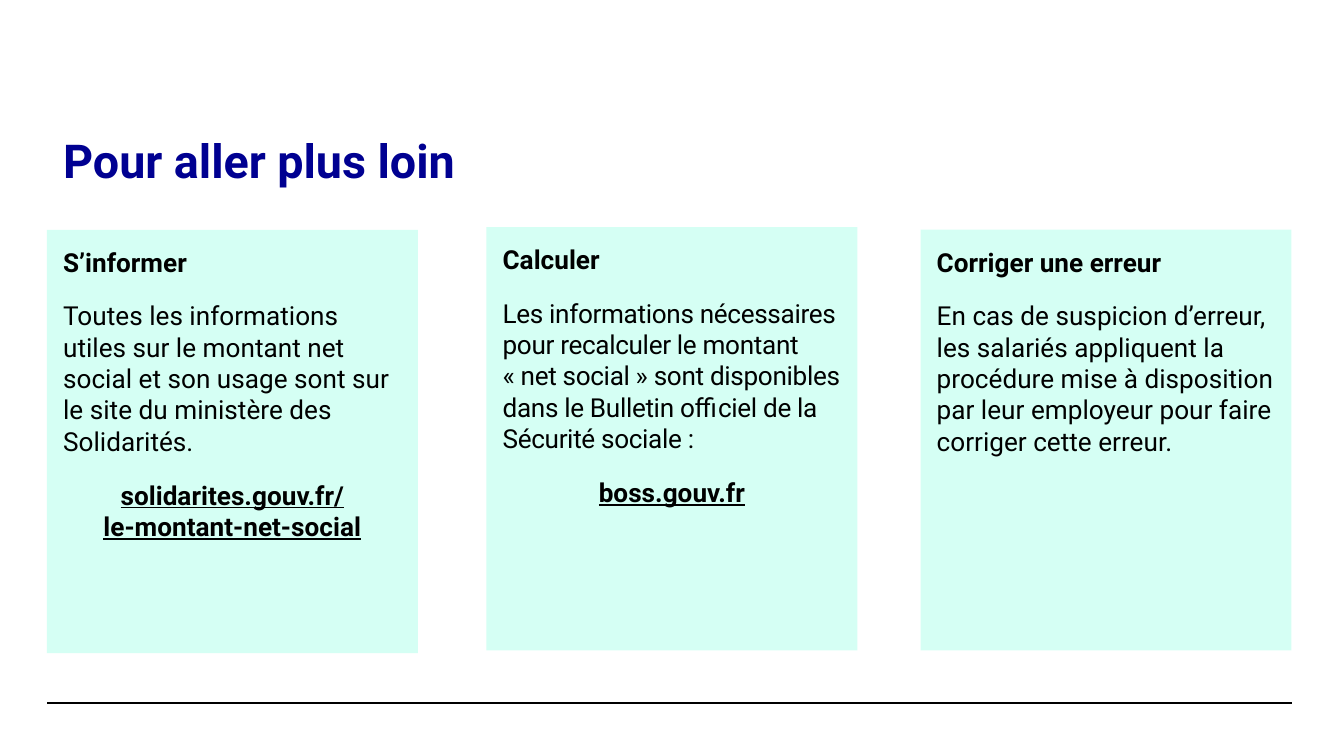
"""Build the slide "Pour aller plus loin" with its three cards."""
from dataclasses import dataclass

from lxml.etree import SubElement
from pptx import Presentation
from pptx.dml.color import RGBColor
from pptx.enum.shapes import MSO_CONNECTOR, MSO_SHAPE
from pptx.enum.text import MSO_ANCHOR, PP_ALIGN
from pptx.oxml.ns import qn
from pptx.slide import Slide
from pptx.text.text import TextFrame, _Paragraph
from pptx.util import Inches, Pt

BLACK = RGBColor(0x00, 0x00, 0x00)
BLUE = RGBColor(0x00, 0x00, 0x91)
MINT = RGBColor(0xD5, 0xFF, 0xF4)
FONT = "Roboto"
NBSP = chr(160)
LEFT = 0.35
PAD = 0.12
WIDTH = 2.76
SPAN = 9.22


@dataclass(frozen=True)
class Card:
    left: float
    top: float
    height: float
    head: str
    body: str
    site: tuple[str, ...] = ()
    track: int = 0


CARDS = (
    Card(
        LEFT, 1.71, 3.15, "S’informer",
        f"Toutes les informations utiles sur le montant net social{NBSP}et son usage "
        "sont sur le site du ministère des Solidarités.",
        ("solidarites.gouv.fr/", "le-montant-net-social"),
    ),
    Card(
        6.85, 1.71, 3.13, "Corriger une erreur",
        "En cas de suspicion d’erreur, les salariés appliquent la procédure mise "
        "à disposition par leur employeur pour faire corriger cette erreur.",
    ),
    Card(
        3.62, 1.69, 3.15, "Calculer",
        "Les informations nécessaires pour recalculer le montant "
        f"«{NBSP}net social{NBSP}» sont disponibles dans le Bulletin officiel de la "
        "Sécurité sociale :",
        ("boss.gouv.fr",), -20,
    ),
)


def add_run(para: _Paragraph, text: str, size: float = 14, color: RGBColor = BLACK,
            bold: bool = True, under: bool = False, track: int = 0) -> None:
    run = para.add_run()
    run.text = text
    font = run.font
    font.name, font.size, font.bold = FONT, Pt(size), bold
    font.color.rgb = color
    if under:
        font.underline = True
    if track:
        run._r.get_or_add_rPr().set("spc", str(track))


def set_frame(frame: TextFrame, anchor: MSO_ANCHOR, top: float, base: float) -> None:
    frame.word_wrap = True
    frame.vertical_anchor = anchor
    frame.margin_left = frame.margin_right = Inches(PAD)
    frame.margin_top, frame.margin_bottom = Inches(top), Inches(base)


def next_para(frame: TextFrame, align: PP_ALIGN = PP_ALIGN.LEFT) -> _Paragraph:
    para = frame.add_paragraph()
    para.alignment = align
    para.space_before, para.space_after = Pt(4), Pt(8)
    return para


def draw_card(slide: Slide, card: Card) -> None:
    box = slide.shapes.add_shape(
        MSO_SHAPE.RECTANGLE, Inches(card.left), Inches(card.top),
        Inches(WIDTH), Inches(card.height))
    box.shadow.inherit = False
    box.fill.solid()
    box.fill.fore_color.rgb = MINT
    box.line.fill.background()
    frame = box.text_frame
    set_frame(frame, MSO_ANCHOR.TOP, PAD, 0)
    head = frame.paragraphs[0]
    head.alignment = PP_ALIGN.LEFT
    head.space_after = Pt(8)
    add_run(head, card.head)
    add_run(next_para(frame), card.body, bold=False, track=card.track)
    if card.site:
        link = next_para(frame, PP_ALIGN.CENTER)
        for num, part in enumerate(card.site):
            if num:
                link.add_line_break()
            add_run(link, part, under=True)


def draw_title(slide: Slide, text: str) -> None:
    box = slide.shapes.add_textbox(Inches(LEFT), Inches(0.92), Inches(9.21), Inches(0.59))
    set_frame(box.text_frame, MSO_ANCHOR.MIDDLE, 0.05, 0.05)
    para = box.text_frame.paragraphs[0]
    para.line_spacing = 0.9
    add_run(para, text, 25, BLUE)


def draw_rule(slide: Slide, left: float, top: float) -> None:
    rule = slide.shapes.add_connector(
        MSO_CONNECTOR.STRAIGHT, Inches(left), Inches(top), Inches(left + SPAN), Inches(top))
    rule.line.color.rgb = BLACK
    rule.line.width = Pt(0.8)
    SubElement(rule._element.spPr, qn("a:effectLst"))


def main() -> None:
    deck = Presentation()
    deck.slide_width = Inches(10)
    deck.slide_height = deck.slide_width * 9 // 16
    slide = deck.slides.add_slide(deck.slide_layouts[6])
    for left in (LEFT, 0.39):
        draw_rule(slide, left, 5.23)
    draw_title(slide, "Pour aller plus loin")
    for card in CARDS:
        draw_card(slide, card)
    deck.save("out.pptx")


if __name__ == "__main__":
    main()
